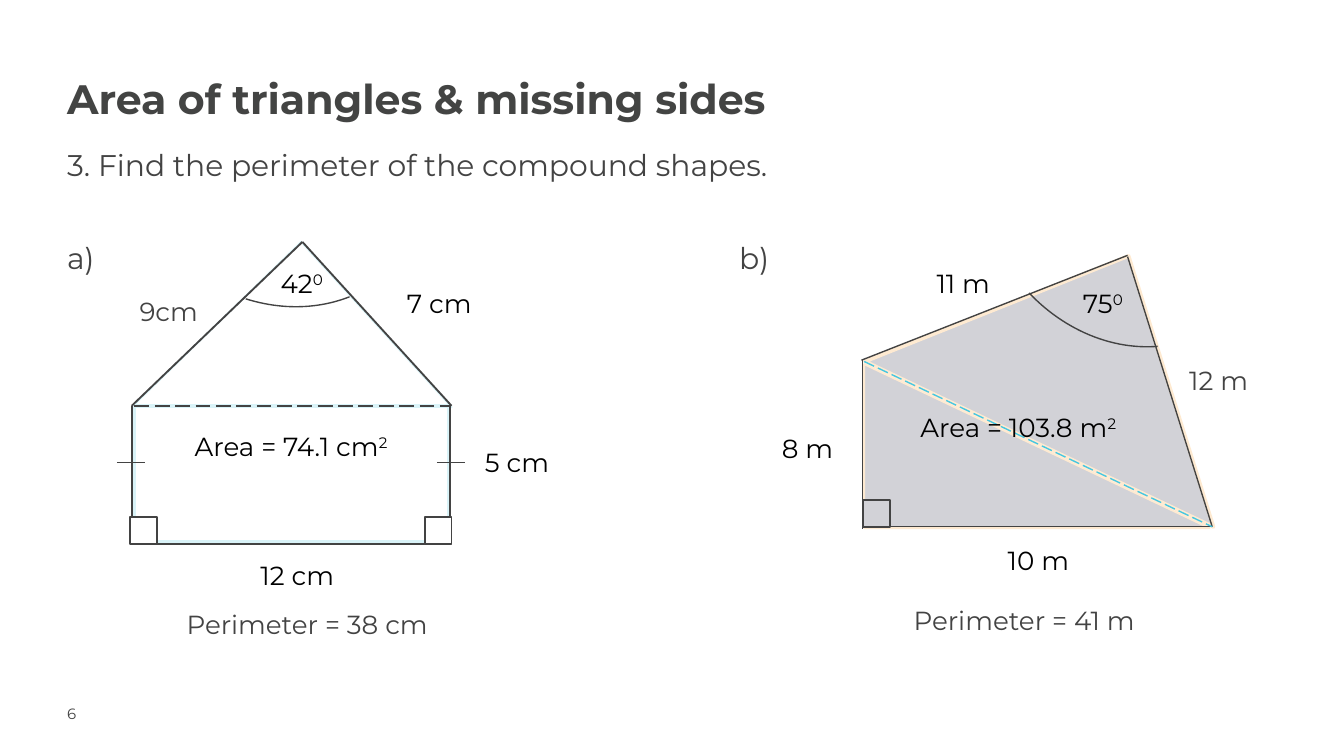
from dataclasses import dataclass
from typing import NamedTuple, Optional

from lxml.etree import SubElement
from pptx import Presentation
from pptx.dml.color import RGBColor
from pptx.enum.dml import MSO_LINE as Dash
from pptx.enum.shapes import MSO_CONNECTOR, MSO_SHAPE as Preset
from pptx.enum.text import MSO_ANCHOR, MSO_AUTO_SIZE, PP_ALIGN
from pptx.oxml.ns import qn
from pptx.util import Inches, Pt

FONT = "Montserrat"
TITLE_GREY = RGBColor(0x43, 0x44, 0x43)
GREY = RGBColor(0x43, 0x43, 0x43)
BLACK = RGBColor(0x00, 0x00, 0x00)
WHITE = RGBColor(0xFF, 0xFF, 0xFF)
PALE_BLUE = RGBColor(0xD9, 0xF3, 0xF8)
PALE_ORANGE = RGBColor(0xFE, 0xEA, 0xD1)
SHADE = RGBColor(0xD2, 0xD2, 0xD7)
CYAN = RGBColor(0x46, 0xC7, 0xE1)

COLUMNS, ROWS = 100, 56.25
SLIDE_WIDTH, SLIDE_HEIGHT = Inches(10), Inches(5.625)
LABEL_HEIGHT = 3.4
SHORT, AREA, PERIMETER = 8, 17.3, 20.7
CORNER = 2


class Face(NamedTuple):
    preset: Preset
    box: tuple[float, float, float, float]
    fill: Optional[RGBColor]
    line: RGBColor = GREY
    weight: float = 1
    turn: float = 0
    adjust: tuple[float, ...] = ()


class Edge(NamedTuple):
    start: tuple[float, float]
    end: tuple[float, float]
    weight: float = 1
    color: RGBColor = GREY
    dashed: bool = False


class Label(NamedTuple):
    text: str
    left: float
    top: float
    width: float = SHORT
    power: str = ""
    color: RGBColor = BLACK


@dataclass(frozen=True)
class Figure:
    faces: list[Face]
    edges: list[Edge]
    corners: list[tuple[float, float]]
    corner_fill: RGBColor
    labels: list[Label]


HOUSE = Figure(
    faces=[
        Face(Preset.ISOSCELES_TRIANGLE, (9.8, 18, 23.8, 12.3), WHITE, PALE_BLUE,
             adjust=(0.53,)),
        Face(Preset.ARC, (9, -2.5, 22.5, 26.1), None, weight=0.75, turn=137.9,
             adjust=(171.35, 192.99)),
        Face(Preset.RECTANGLE, (10, 30.2, 23.4, 10.1), WHITE, PALE_BLUE, 2),
    ],
    edges=[
        Edge((22.5, 18), (9.8, 30.2)),
        Edge((9.8, 30.2), (9.8, 40.5)),
        Edge((33.6, 30.2), (22.5, 18)),
        Edge((33.5, 40.5), (33.5, 30.2)),
        Edge((33.5, 40.5), (9.8, 40.5)),
        Edge((8.7, 34.4), (10.8, 34.4), 0.75),
        Edge((32.5, 34.4), (34.6, 34.4), 0.75),
        Edge((10, 30.2), (33.5, 30.2), dashed=True),
    ],
    corners=[(9.7, 38.5), (31.6, 38.5)],
    corner_fill=WHITE,
    labels=[
        Label("12 cm", 18.4, 41.1),
        Label("42", 19.9, 19.4, power="0"),
        Label("5 cm", 35.1, 32.7),
        Label("7 cm", 29.3, 20.9),
        Label("9cm", 9.4, 21.5, color=GREY),
        Label("Area = 74.1 cm", 13.5, 31.5, AREA, "2"),
        Label("Perimeter = 38 cm", 12.9, 44.8, PERIMETER, color=GREY),
    ],
)

QUADRILATERAL = Figure(
    faces=[
        Face(Preset.RIGHT_TRIANGLE, (64.3, 27.1, 25.7, 12.2), SHADE, PALE_ORANGE),
        Face(Preset.ISOSCELES_TRIANGLE, (66.3, 18.3, 28.7, 15.5), SHADE,
             PALE_ORANGE, 2, 25.4, (0.5,)),
        Face(Preset.ARC, (72.8, 0, 22.5, 26.1), None, weight=0.75, turn=155.1,
             adjust=(171.35, 201.27)),
    ],
    edges=[
        Edge((64.2, 26.8), (64.2, 39.4), 0.75),
        Edge((65.2, 39.2), (90.2, 39.2), 0.75),
        Edge((83.9, 19), (64.1, 26.8), 0.75),
        Edge((90.2, 39.2), (83.9, 19.1), 0.75),
        Edge((64.3, 26.9), (90.2, 39.2), 0.75, CYAN, True),
    ],
    corners=[(64.2, 37.2)],
    corner_fill=SHADE,
    labels=[
        Label("8 m", 57.2, 31.7),
        Label("10 m", 74, 40),
        Label("75", 79.6, 20.9, power="0"),
        Label("11 m", 68.7, 19.4),
        Label("12 m", 87.5, 26.6, color=GREY),
        Label("Area = 103.8 m", 67.5, 30.1, AREA, "2"),
        Label("Perimeter = 41 m", 67, 44.5, PERIMETER, color=GREY),
    ],
)


def across(columns: float) -> int:
    return round(SLIDE_WIDTH * columns / COLUMNS)


def down(rows: float) -> int:
    return round(SLIDE_HEIGHT * rows / ROWS)


def place(box: tuple[float, float, float, float]) -> tuple[int, int, int, int]:
    left, top, width, height = box
    return across(left), down(top), across(width), down(height)


def write(paragraph, text: str, *, size: float, color: RGBColor = GREY,
          bold: bool = False, power: str = "", spacing: Optional[float] = None,
          before: float = 0, tab: float = 0) -> None:
    paragraph.alignment = PP_ALIGN.LEFT
    if spacing:
        paragraph.line_spacing = spacing
    if before:
        paragraph.space_before = Pt(before)
    if tab:
        stops = SubElement(paragraph._p.get_or_add_pPr(), qn("a:tabLst"))
        SubElement(stops, qn("a:tab"), pos=str(across(tab)), algn="l")
    for part in filter(None, (text, power)):
        run = paragraph.add_run()
        run.text = part
        run.font.name, run.font.size = FONT, Pt(size)
        run.font.bold, run.font.color.rgb = bold, color
    if power:
        run._r.get_or_add_rPr().set("baseline", "30000")


def prepare(holder, box: tuple[float, float, float, float], inset: bool = False):
    holder.left, holder.top, holder.width, holder.height = place(box)
    frame = holder.text_frame
    frame.word_wrap = True
    frame.auto_size = MSO_AUTO_SIZE.NONE
    frame.vertical_anchor = MSO_ANCHOR.TOP
    frame.margin_left = frame.margin_right = Inches(0.1 if inset else 0)
    frame.margin_top = frame.margin_bottom = Inches(0.05 if inset else 0)
    return frame


def add_text(slide, box: tuple[float, float, float, float], inset: bool = False):
    return prepare(slide.shapes.add_textbox(*place(box)), box, inset)


def draw_face(slide, face: Face) -> None:
    shape = slide.shapes.add_shape(face.preset, *place(face.box))
    shape.shadow.inherit = False
    shape.rotation = face.turn
    for index, value in enumerate(face.adjust):
        shape.adjustments[index] = value
    if face.fill is None:
        shape.fill.background()
    else:
        shape.fill.solid()
        shape.fill.fore_color.rgb = face.fill
    shape.line.color.rgb, shape.line.width = face.line, Pt(face.weight)


def draw_edge(slide, edge: Edge) -> None:
    (x1, y1), (x2, y2) = edge.start, edge.end
    connector = slide.shapes.add_connector(
        MSO_CONNECTOR.STRAIGHT, across(x1), down(y1), across(x2), down(y2))
    connector.line.color.rgb, connector.line.width = edge.color, Pt(edge.weight)
    if edge.dashed:
        connector.line.dash_style = Dash.LONG_DASH
    SubElement(connector._element.spPr, qn("a:effectLst"))


def draw_figure(slide, figure: Figure) -> None:
    for face in figure.faces:
        draw_face(slide, face)
    for edge in figure.edges:
        draw_edge(slide, edge)
    for left, top in figure.corners:
        draw_face(slide, Face(Preset.RECTANGLE, (left, top, CORNER, CORNER),
                              figure.corner_fill))
    for label in figure.labels:
        box = label.left, label.top, label.width, LABEL_HEIGHT
        write(add_text(slide, box, inset=True).paragraphs[0], label.text,
              size=14, color=label.color, power=label.power)


def main() -> None:
    deck = Presentation()
    deck.slide_width, deck.slide_height = SLIDE_WIDTH, SLIDE_HEIGHT
    slide = deck.slides.add_slide(deck.slide_layouts[5])
    title = prepare(slide.shapes.title, (5, 4.9, 73.7, 5.2))
    write(title.paragraphs[0], "Area of triangles & missing sides",
          size=22, color=TITLE_GREY, bold=True, spacing=1.15)
    question = add_text(slide, (5, 10.1, 90, 46.1))
    write(question.paragraphs[0], "3. Find the perimeter of the compound shapes.",
          size=16, spacing=1.3)
    write(question.add_paragraph(), "a)\tb)", size=16, spacing=1.3, before=25, tab=50)
    page_number = add_text(slide, (5, 52.4, 7.9, 2))
    write(page_number.paragraphs[0], "6", size=8)
    for figure in (HOUSE, QUADRILATERAL):
        draw_figure(slide, figure)
    deck.save("out.pptx")


if __name__ == "__main__":
    main()
